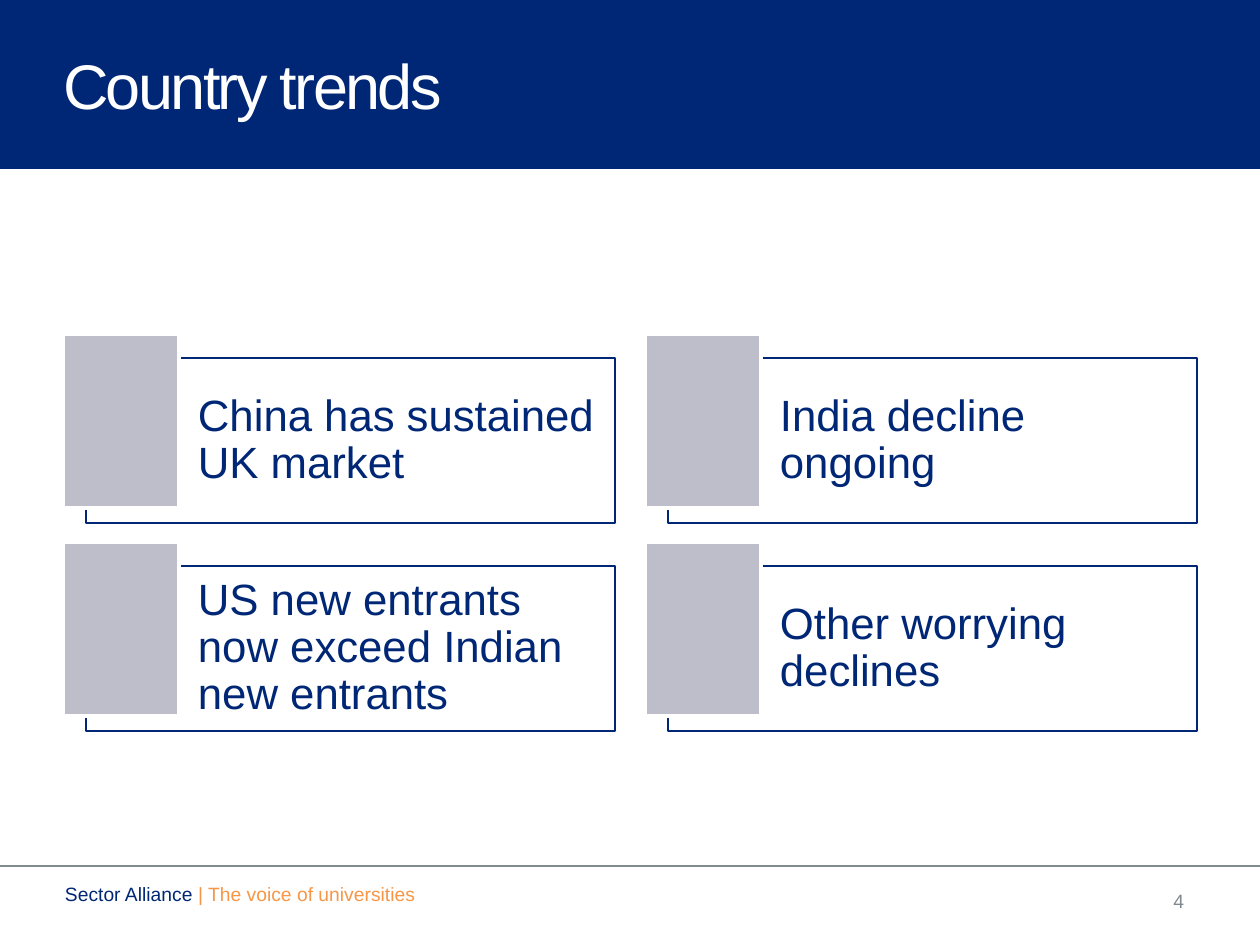
from lxml import etree
from pptx import Presentation
from pptx.dml.color import RGBColor
from pptx.enum.shapes import MSO_CONNECTOR, MSO_SHAPE
from pptx.enum.text import MSO_ANCHOR as ANCHOR, PP_ALIGN as ALIGN
from pptx.oxml.ns import qn
from pptx.util import Emu, Pt

PX_PER_INCH = 126
COLORS = {"navy": "002776", "white": "FFFFFF", "block": "BDBECA",
          "gray": "818A8F", "orange": "F79646"}
TRENDS = ["China has sustained UK market", "India decline ongoing",
          "US new entrants now exceed Indian new entrants",
          "Other worrying declines"]
COLUMN_STEP, ROW_STEP = 582, 208


def px(value):
    return Emu(round(value * 914400 / PX_PER_INCH))


def color(name):
    return RGBColor.from_string(COLORS[name])


def add_rect(slide, box, fill, line=None, width=0.75, alpha=None):
    shape = slide.shapes.add_shape(MSO_SHAPE.RECTANGLE, *map(px, box))
    shape.shadow.inherit = False
    shape.fill.solid()
    shape.fill.fore_color.rgb = color(fill)
    if alpha:
        fill_color = shape.fill._xPr.find(qn("a:solidFill"))[0]
        etree.SubElement(fill_color, qn("a:alpha"), val=str(alpha * 1000))
    if line:
        shape.line.color.rgb = color(line)
        shape.line.width = Pt(width)
    else:
        shape.line.fill.background()
    return shape


def write_text(shape, runs, size, margins=(13, 6, 13, 6), anchor=ANCHOR.MIDDLE,
               spacing=None, **paragraph_format):
    """Fill a shape with one paragraph of (text, color name) runs."""
    frame = shape.text_frame
    left, top, right, bottom = map(px, margins)
    frame_format = {"word_wrap": True, "vertical_anchor": anchor,
                    "margin_left": left, "margin_top": top,
                    "margin_right": right, "margin_bottom": bottom}
    for name, value in frame_format.items():
        setattr(frame, name, value)
    paragraph = frame.paragraphs[0]
    for name, value in {"alignment": ALIGN.LEFT, **paragraph_format}.items():
        setattr(paragraph, name, value)
    for text, color_name in runs:
        run = paragraph.add_run()
        run.text = text
        for name, value in {"name": "Arial", "size": Pt(size)}.items():
            setattr(run.font, name, value)
        run.font.color.rgb = color(color_name)
        if spacing:
            run.font._element.set("spc", str(spacing))


def add_text(slide, box, runs, size, **text_format):
    write_text(slide.shapes.add_textbox(*map(px, box)), runs, size, **text_format)


def add_rule(slide, y, width):
    rule = slide.shapes.add_connector(
        MSO_CONNECTOR.STRAIGHT, px(0), px(y), px(width), px(y))
    rule.line.color.rgb = color("gray")
    rule.line.width = Pt(0.75)
    etree.SubElement(rule._element.spPr, qn("a:effectLst"))


def add_trend_card(slide, x, y, text):
    """Outlined text card with a solid block over its top left corner."""
    card = add_rect(slide, (x + 23, y + 24, 529, 165), "white", "navy", alpha=40)
    write_text(card, [(text, "navy")], 25, margins=(112, 12, 12, 12),
               line_spacing=0.9)
    add_rect(slide, (x, y, 116, 174), "block", "white", 2)


def main():
    presentation = Presentation()
    presentation.slide_width, presentation.slide_height = px(1260), px(945)
    slide = presentation.slides.add_slide(presentation.slide_layouts[6])

    # Header band and title
    add_rule(slide, 866, 1260)
    add_rect(slide, (0, 0, 1260, 169), "navy")
    add_text(slide, (63, 23, 999, 122), [("Country trends", "white")], 36,
             margins=(0, 6, 13, 6), spacing=-150)

    # Two by two grid of trends
    for index, trend in enumerate(TRENDS):
        row, column = divmod(index, 2)
        add_trend_card(slide, 63 + column * COLUMN_STEP, 334 + row * ROW_STEP, trend)

    # Footer
    add_text(slide, (903, 876, 294, 50), [("4", "gray")], 11, alignment=ALIGN.RIGHT)
    add_text(slide, (52, 876, 399, 50),
             [("Sector Alliance ", "navy"), ("| The voice of universities", "orange")],
             11, anchor=ANCHOR.TOP)

    presentation.save("out.pptx")


if __name__ == "__main__":
    main()
